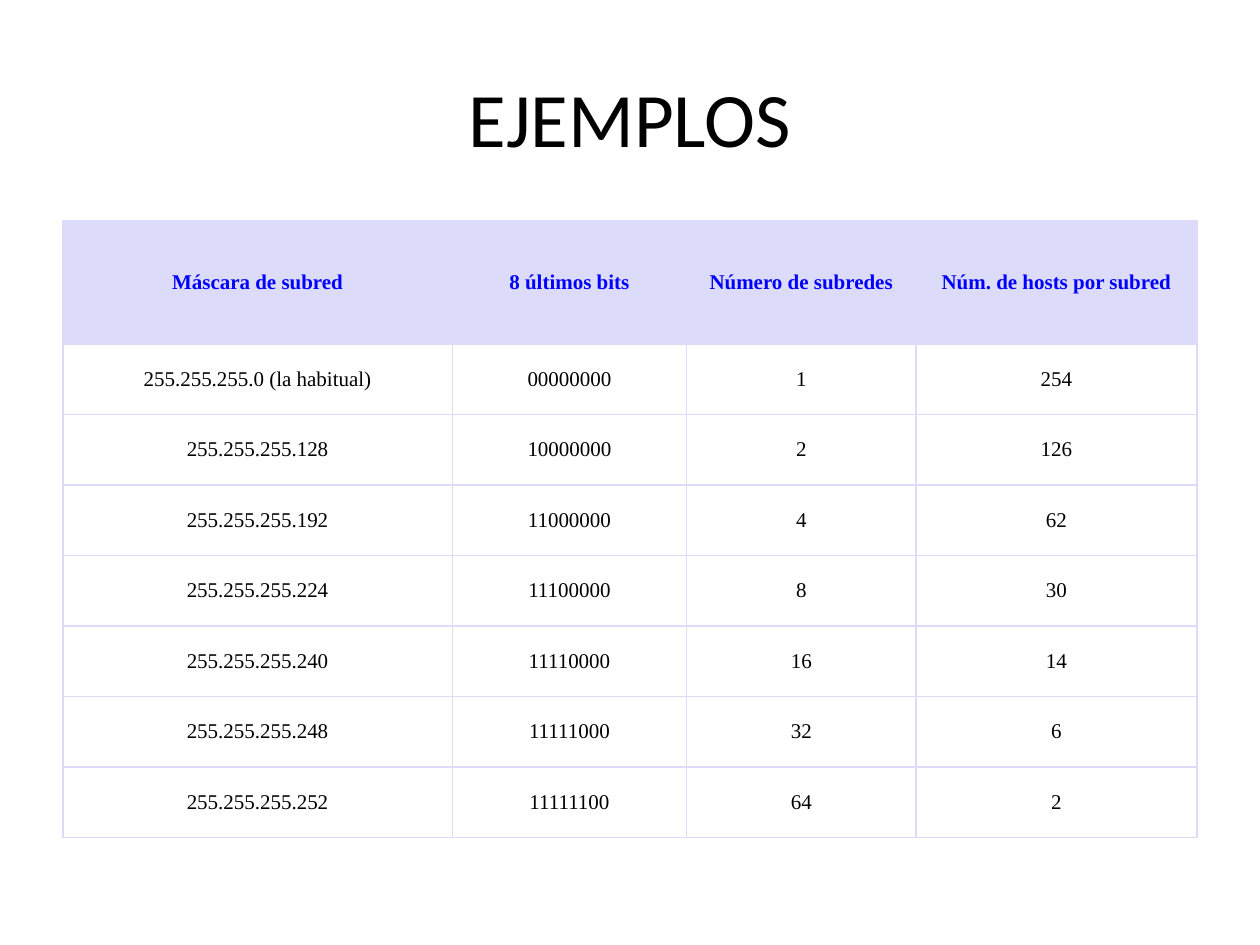
import lxml.etree
import pptx
import pptx.dml.color
import pptx.enum.text
import pptx.oxml.ns
import pptx.util

Inches = pptx.util.Inches

TITLE = "EJEMPLOS"
HEADERS = ["Máscara de subred", "8 últimos bits", "Número de subredes", "Núm. de hosts por subred"]
SUBNETS = [
    ("255.255.255.0 (la habitual)", "00000000", "1", "254"),
    ("255.255.255.128", "10000000", "2", "126"),
    ("255.255.255.192", "11000000", "4", "62"),
    ("255.255.255.224", "11100000", "8", "30"),
    ("255.255.255.240", "11110000", "16", "14"),
    ("255.255.255.248", "11111000", "32", "6"),
    ("255.255.255.252", "11111100", "64", "2"),
]
COLUMN_WIDTHS = [3.09, 1.86, 1.82, 2.23]
HEADER_HEIGHT, ROW_HEIGHT = 0.98, 0.56
LEFT, TABLE_TOP = 0.5, 1.75

THEME = {
    "title": {"font": "Calibri", "size": 44, "color": "000000"},
    "header": {"font": "Times New Roman", "size": 12, "color": "0000FF", "bold": True},
    "body": {"font": "Times New Roman", "size": 12, "color": "000000"},
    "lavender": "DCDCFA",
    "border": 1,
}


def write_text(text_frame, text, *, font, size, color, bold=False):
    """Write one centred, formatted paragraph into a text frame."""
    paragraph = text_frame.paragraphs[0]
    paragraph.alignment = pptx.enum.text.PP_ALIGN.CENTER
    run = paragraph.add_run()
    run.text = text
    run.font.name = font
    run.font.size = pptx.util.Pt(size)
    run.font.bold = bold
    run.font.color.rgb = pptx.dml.color.RGBColor.from_string(color)


def add_borders(cell, color, width):
    """Draw a solid line on each side of a table cell."""
    qualified = pptx.oxml.ns.qn
    properties = cell._tc.get_or_add_tcPr()
    for side in ("lnL", "lnR", "lnT", "lnB"):
        line = lxml.etree.SubElement(properties, qualified(f"a:{side}"), w=str(pptx.util.Pt(width)))
        fill = lxml.etree.SubElement(line, qualified("a:solidFill"))
        lxml.etree.SubElement(fill, qualified("a:srgbClr"), val=color)


def add_title(slide):
    """Add the slide heading."""
    shape = slide.shapes.add_textbox(Inches(LEFT), Inches(0.3), Inches(9), Inches(1.25))
    shape.text_frame.word_wrap = True
    shape.text_frame.vertical_anchor = pptx.enum.text.MSO_ANCHOR.MIDDLE
    write_text(shape.text_frame, TITLE, **THEME["title"])


def add_subnet_table(slide):
    """Add the table of subnet masks."""
    rows = [HEADERS, *SUBNETS]
    heights = [HEADER_HEIGHT] + [ROW_HEIGHT] * len(SUBNETS)
    table = slide.shapes.add_table(
        len(rows), len(HEADERS), Inches(LEFT), Inches(TABLE_TOP),
        Inches(sum(COLUMN_WIDTHS)), Inches(sum(heights)),
    ).table
    table.horz_banding = False
    for column, width in zip(table.columns, COLUMN_WIDTHS):
        column.width = Inches(width)
    for row_index, (values, height) in enumerate(zip(rows, heights)):
        table.rows[row_index].height = Inches(height)
        is_header = row_index == 0
        for column_index, value in enumerate(values):
            cell = table.cell(row_index, column_index)
            cell.vertical_anchor = pptx.enum.text.MSO_ANCHOR.MIDDLE
            add_borders(cell, THEME["lavender"], THEME["border"])
            if is_header:
                cell.fill.solid()
                cell.fill.fore_color.rgb = pptx.dml.color.RGBColor.from_string(THEME["lavender"])
            else:
                cell.fill.background()
            write_text(cell.text_frame, value, **THEME["header" if is_header else "body"])


def main():
    """Build and save the presentation."""
    presentation = pptx.Presentation()
    presentation.slide_width, presentation.slide_height = Inches(10), Inches(7.5)
    slide = presentation.slides.add_slide(presentation.slide_layouts[6])
    add_title(slide)
    add_subnet_table(slide)
    presentation.save("out.pptx")


if __name__ == "__main__":
    main()
